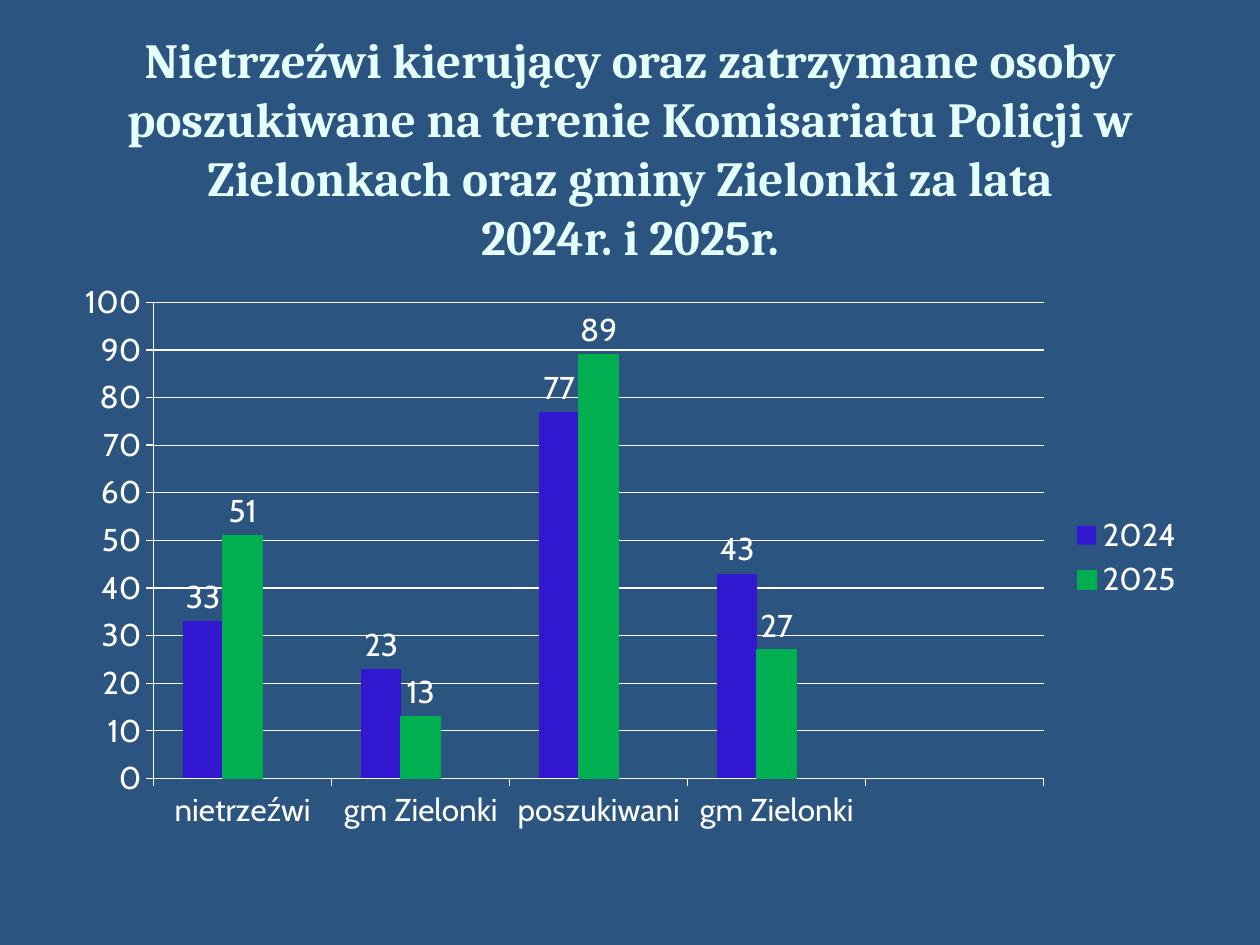
from lxml import etree
from pptx import Presentation
from pptx.chart.data import CategoryChartData
from pptx.dml.color import RGBColor
from pptx.enum.chart import XL_CHART_TYPE, XL_LABEL_POSITION, XL_LEGEND_POSITION, XL_TICK_MARK
from pptx.enum.text import MSO_ANCHOR, MSO_AUTO_SIZE, PP_ALIGN
from pptx.oxml import parse_xml
from pptx.oxml.ns import nsdecls, qn
from pptx.util import Inches, Pt

COLUMN_CLUSTERED = XL_CHART_TYPE.COLUMN_CLUSTERED
OUTSIDE_END = XL_LABEL_POSITION.OUTSIDE_END
LEGEND_RIGHT = XL_LEGEND_POSITION.RIGHT
TICK_OUTSIDE = XL_TICK_MARK.OUTSIDE
MIDDLE = MSO_ANCHOR.MIDDLE
NO_AUTOFIT = MSO_AUTO_SIZE.NONE
CENTER = PP_ALIGN.CENTER

THEME = {
    "background": RGBColor.from_string("2B5481"),
    "title": RGBColor.from_string("E5FFFF"),
    "chart_text": RGBColor.from_string("FFFFFF"),
    "series": [RGBColor.from_string("3318D2"), RGBColor.from_string("00B050")],
    "title_font": "Cambria",
    "chart_font": "Cabin",
    "title_size": Pt(28),
    "chart_size": Pt(18),
    "line_width": Pt(0.75),
}

presentation = Presentation()
presentation.slide_width = Inches(10)
presentation.slide_height = Inches(7.5)
width, height = presentation.slide_width, presentation.slide_height
margin = int(width * 0.05)
content_width = width - 2 * margin

slide = presentation.slides.add_slide(presentation.slide_layouts[5])
slide.background.fill.solid()
slide.background.fill.fore_color.rgb = THEME["background"]

title = slide.shapes.title
title.left, title.top = margin, int(height * 0.056)
title.width, title.height = content_width, int(height * 0.2)
title_frame = title.text_frame
title_frame.text = (
    "Nietrzeźwi kierujący oraz zatrzymane osoby poszukiwane na terenie "
    "Komisariatu Policji w Zielonkach oraz gminy Zielonki za lata\v2024r. i 2025r."
)
title_frame.word_wrap = True
title_frame.auto_size = NO_AUTOFIT
title_frame.vertical_anchor = MIDDLE
title_paragraph = title_frame.paragraphs[0]
title_paragraph.alignment = CENTER
for run in title_paragraph.runs:
    run.font.name = THEME["title_font"]
    run.font.size = THEME["title_size"]
    run.font.bold = True
    run.font.color.rgb = THEME["title"]

chart_data = CategoryChartData()
chart_data.categories = ["nietrzeźwi", "gm Zielonki", "poszukiwani", "gm Zielonki", ""]
chart_data.add_series("2024", [33, 23, 77, 43, None])
chart_data.add_series("2025", [51, 13, 89, 27, None])
chart_data.add_series("Series 3", [None] * 5)
chart = slide.shapes.add_chart(
    COLUMN_CLUSTERED, margin, int(height * 0.29), content_width, int(height * 0.6), chart_data
).chart
chart.has_title = False
chart.font.name = THEME["chart_font"]
chart.font.size = THEME["chart_size"]
chart.font.color.rgb = THEME["chart_text"]

plot = chart.plots[0]
plot.gap_width = 150
plot.overlap = 0
plot.vary_by_categories = False
for series, color in zip(plot.series, THEME["series"]):
    series.format.fill.solid()
    series.format.fill.fore_color.rgb = color
    labels = series.data_labels
    labels.show_value = True
    labels.position = OUTSIDE_END
plot.series[1].format.line.color.rgb = THEME["series"][1]
plot.series[1].format.line.width = THEME["line_width"]
plot.series[2].format.fill.background()

value_axis = chart.value_axis
value_axis.minimum_scale, value_axis.maximum_scale = 0, 100
value_axis.major_unit = 10
value_axis.has_major_gridlines = True
for axis in (chart.category_axis, value_axis):
    axis.major_tick_mark = TICK_OUTSIDE
for part in (chart.category_axis, value_axis, value_axis.major_gridlines):
    part.format.line.color.rgb = THEME["chart_text"]
    part.format.line.width = THEME["line_width"]

chart.has_legend = True
chart.legend.position = LEGEND_RIGHT
chart.legend.include_in_layout = False
hidden_entry = parse_xml(
    f'<c:legendEntry {nsdecls("c")}><c:idx val="2"/><c:delete val="1"/></c:legendEntry>'
)
chart_xml = chart.element.find(qn("c:chart"))
chart_xml.find(qn("c:legend")).find(qn("c:legendPos")).addnext(hidden_entry)

plot_area = chart_xml.find(qn("c:plotArea"))
for old_layout in plot_area.findall(qn("c:layout")):
    plot_area.remove(old_layout)
layout = etree.Element(qn("c:layout"))
manual_layout = etree.SubElement(layout, qn("c:manualLayout"))
for name, value in (
    ("layoutTarget", "inner"), ("xMode", "edge"), ("yMode", "edge"),
    ("x", 0.08), ("y", 0.05), ("w", 0.785), ("h", 0.84),
):
    etree.SubElement(manual_layout, qn(f"c:{name}")).set("val", str(value))
plot_area.insert(0, layout)

presentation.save("out.pptx")
